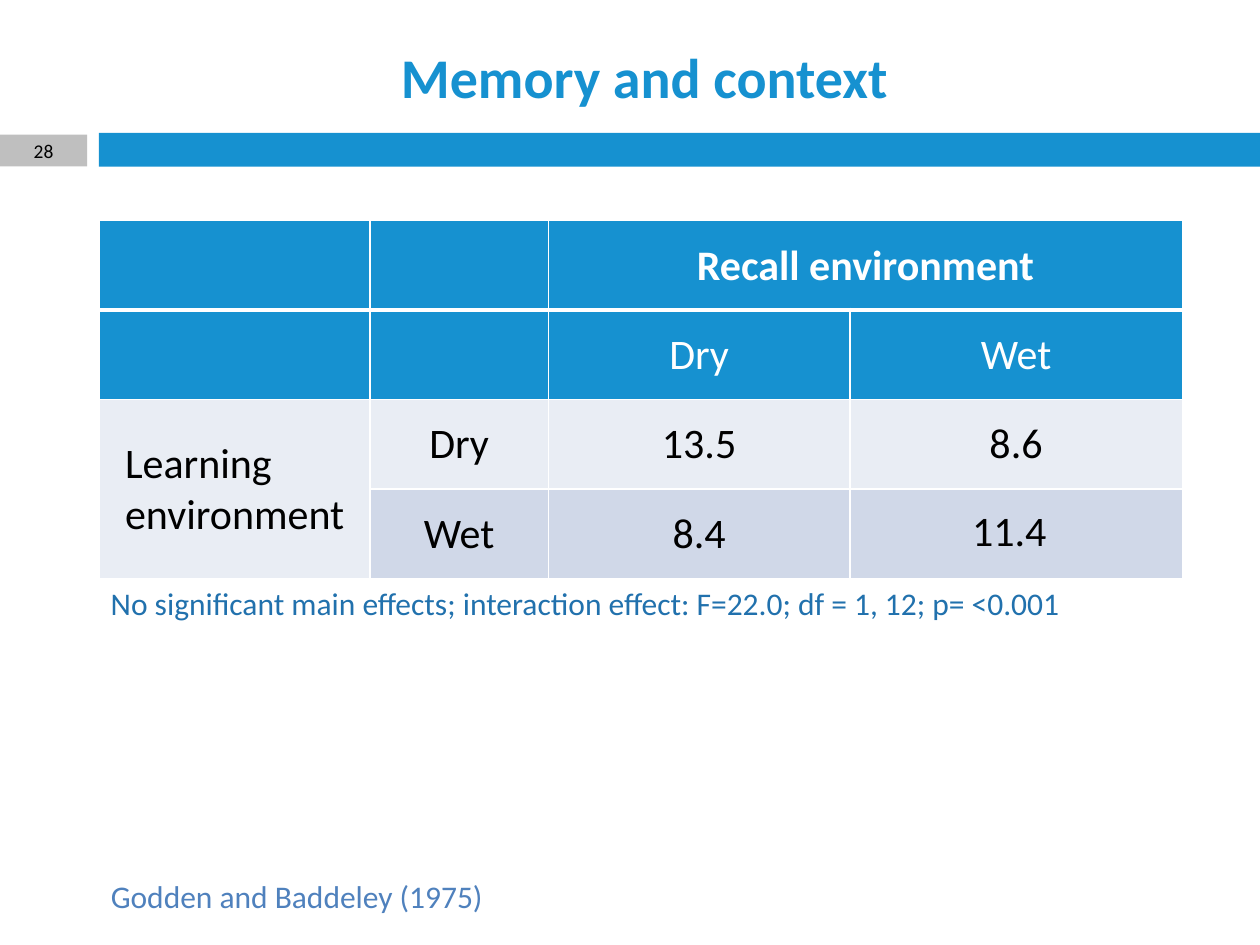
from pptx import Presentation
from pptx import util as u
from pptx.dml.color import RGBColor
from pptx.enum import shapes, text
from pptx.oxml import parse_xml
from pptx.oxml.ns import nsdecls

COLORS = {
    "blue": "1691D0", "gray": "BFBFBF", "white": "FFFFFF", "black": "000000",
    "pale": "E9EDF4", "band": "D0D8E8", "source": "4F81BD", "finding": "2171AD",
}
CENTER, LEFT = text.PP_ALIGN.CENTER, text.PP_ALIGN.LEFT
MIDDLE = text.MSO_ANCHOR.MIDDLE


def apply(target, values):
    for name, value in values.items():
        setattr(target, name, value)


class SlideBuilder:
    """Holds the style and current slide, and adds elements measured in points."""

    def __init__(self, slide, font="Calibri"):
        self.slide = slide
        self.font = font

    def color(self, name):
        return RGBColor.from_string(COLORS[name])

    def fill(self, target, name):
        target.fill.solid()
        target.fill.fore_color.rgb = self.color(name)

    def set_words(self, frame, lines, size, color, bold=False, align=LEFT):
        frame.text = lines
        for paragraph in frame.paragraphs:
            paragraph.alignment = align
            apply(paragraph.font, {"name": self.font, "size": u.Pt(size), "bold": bold})
            paragraph.font.color.rgb = self.color(color)

    def bar(self, box, color):
        bar = self.slide.shapes.add_shape(shapes.MSO_SHAPE.RECTANGLE, *map(u.Pt, box))
        bar.shadow.inherit = False
        bar.line.fill.background()
        self.fill(bar, color)
        return bar

    def label(self, box, lines, size, color, wrap=True, anchor=text.MSO_ANCHOR.TOP, **style):
        frame = self.slide.shapes.add_textbox(*map(u.Pt, box)).text_frame
        apply(frame, {"word_wrap": wrap, "vertical_anchor": anchor})
        self.set_words(frame, lines, size, color, **style)

    def borders(self, cell, widths):
        properties = cell._tc.get_or_add_tcPr()
        for position, (side, width) in enumerate(widths.items()):
            properties.insert(position, parse_xml(
                f'<a:ln{side} {nsdecls("a")} w="{u.Pt(width)}"><a:solidFill>'
                f'<a:srgbClr val="{COLORS["white"]}"/></a:solidFill></a:ln{side}>'))

    def table(self, box, columns, rows, fills, merges):
        grid = self.slide.shapes.add_table(len(rows), len(columns), *map(u.Pt, box)).table
        for column, width in zip(grid.columns, columns):
            column.width = u.Pt(width)
        for start, end in merges:
            grid.cell(*start).merge(grid.cell(*end))
        for r, (row, fill) in enumerate(zip(rows, fills)):
            for c, words in enumerate(row):
                cell = grid.cell(r, c)
                side_heading = r > 1 and c == 0
                apply(cell, {
                    "vertical_anchor": MIDDLE, "margin_left": u.Pt(15 if side_heading else 0.7),
                    "margin_right": u.Pt(0.7), "margin_top": u.Pt(0.7), "margin_bottom": 0,
                })
                self.fill(cell, fill)
                self.borders(cell, {"L": 1, "R": 1, "T": 3 if r == 1 else 1,
                                    "B": 3 if r == 0 else 1})
                if words:
                    self.set_words(cell.text_frame, words, 24, "white" if r < 2 else "black",
                                   bold=r == 0, align=LEFT if side_heading else CENTER)


def main():
    deck = Presentation()
    apply(deck, {"slide_width": u.Pt(720), "slide_height": u.Pt(540)})
    page = SlideBuilder(deck.slides.add_slide(deck.slide_layouts[6]))

    page.bar((56.5, 76, 663.5, 19.3), "blue")
    number = page.bar((0, 77, 49.8, 18.2), "gray").text_frame
    apply(number, {"vertical_anchor": MIDDLE, "margin_top": 0, "margin_bottom": 0})
    page.set_words(number, "28", 11.1, "black", align=CENTER)
    page.label((56.5, 18.7, 623.5, 49), "Memory and context", 32, "blue",
               anchor=MIDDLE, bold=True, align=CENTER)

    page.table(
        (56.5, 126, 619.2, 204.5), (154.8, 102.2, 172.1, 190.1),
        [["", "", "Recall environment", ""],
         ["", "", "Dry", "Wet"],
         ["Learning\nenvironment", "Dry", "13.5", "8.6"],
         ["", "Wet", "8.4", ""]],
        ["blue", "blue", "pale", "band"],
        [((0, 2), (0, 3)), ((2, 0), (3, 0))])
    page.label((56.2, 497.5, 381, 29), "Godden and Baddeley (1975)", 18, "source")
    page.label((56.2, 330, 642, 29),
               "No significant main effects; interaction effect: F=22.0; df = 1, 12; p= <0.001",
               18, "finding")
    page.label((548, 284.5, 57.6, 36), "11.4", 24, "black", wrap=False, align=CENTER)
    deck.save("out.pptx")


if __name__ == "__main__":
    main()
